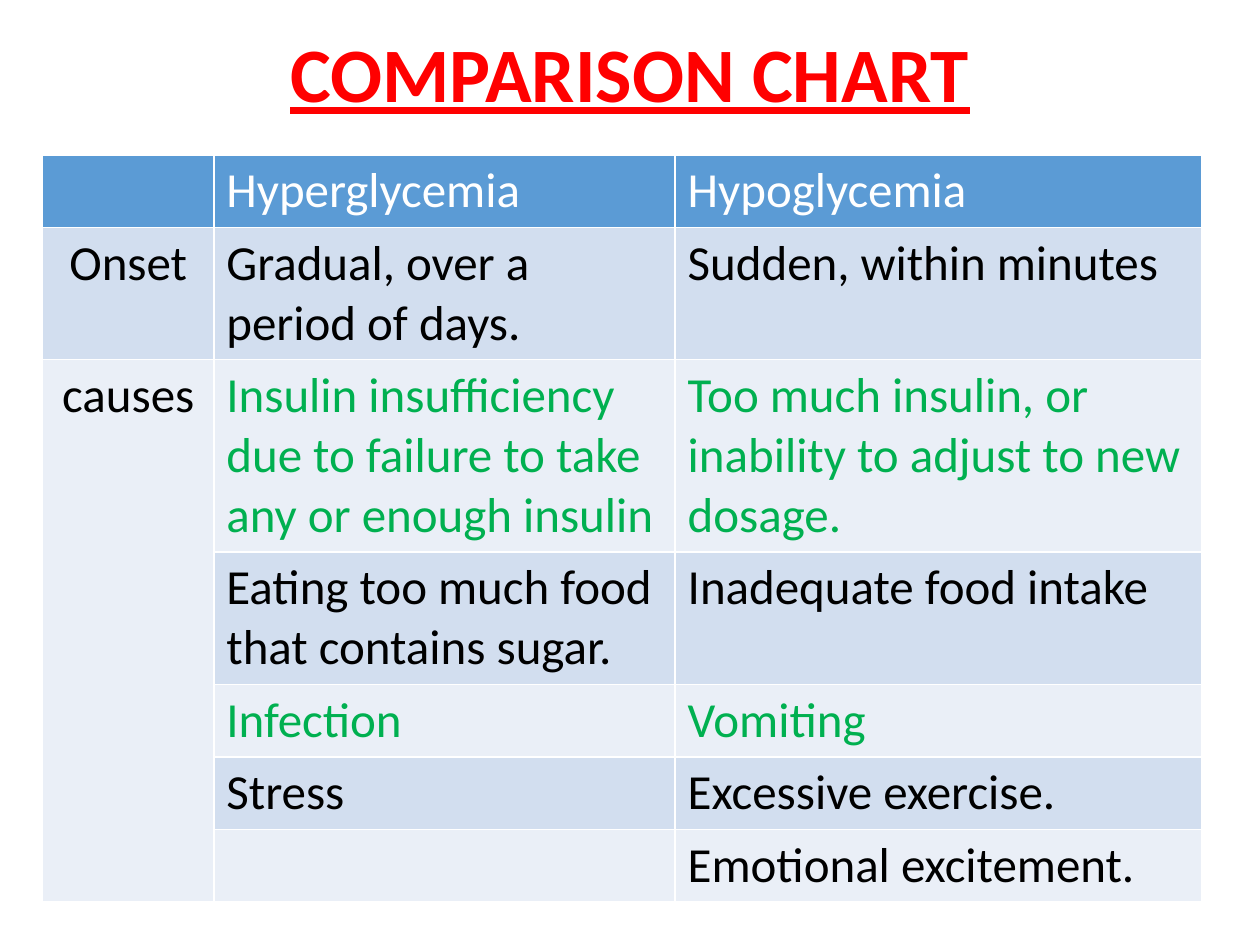
from dataclasses import dataclass

import pptx
import pptx.dml.color
import pptx.enum.text
import pptx.oxml
import pptx.oxml.ns
import pptx.util
from pptx.util import Cm


@dataclass(frozen=True)
class Theme:
    font: str = "Calibri"
    title_size: int = 44
    body_size: int = 28
    title: str = "FF0000"
    header_fill: str = "5B9BD5"
    bands: tuple[str, str] = ("EAEFF7", "D2DEEF")
    white: str = "FFFFFF"
    black: str = "000000"
    green: str = "00B050"
    border_width: int = 1


@dataclass(frozen=True)
class ComparisonRow:
    label: str
    hyper: str
    hypo: str
    color: str
    lines: int = 1


THEME = Theme()
ROWS = [
    ComparisonRow("", "Hyperglycemia", "Hypoglycemia", THEME.white),
    ComparisonRow("Onset", "Gradual, over a period of days.", "Sudden, within minutes",
                  THEME.black, 2),
    ComparisonRow("causes", "Insulin insufficiency due to failure to take any or enough insulin",
                  "Too much insulin, or inability to adjust to new dosage.", THEME.green, 3),
    ComparisonRow("", "Eating too much food that contains sugar.", "Inadequate food intake",
                  THEME.black, 2),
    ComparisonRow("", "Infection", "Vomiting", THEME.green),
    ComparisonRow("", "Stress", "Excessive exercise.", THEME.black),
    ComparisonRow("", "", "Emotional excitement.", THEME.black),
]
CAUSES_ROW = 2
COLUMN_WIDTHS = (3.45, 9.3, 10.62)
LINE_HEIGHT = 1.19
CELL_PADDING = 0.25


def rgb(color: str) -> pptx.dml.color.RGBColor:
    return pptx.dml.color.RGBColor.from_string(color)


def style_text(para, size: int, color: str, bold: bool = False, centred: bool = False) -> None:
    align = pptx.enum.text.PP_ALIGN
    para.alignment = align.CENTER if centred else align.LEFT
    for span in para.runs:
        span.font.name = THEME.font
        span.font.size = pptx.util.Pt(size)
        span.font.bold = bold
        span.font.color.rgb = rgb(color)


def add_borders(cell) -> None:
    properties = cell._tc.get_or_add_tcPr()
    width = pptx.util.Pt(THEME.border_width)
    for side in ("lnL", "lnR", "lnT", "lnB"):
        properties.append(pptx.oxml.parse_xml(
            f'<a:{side} {pptx.oxml.ns.nsdecls("a")} w="{width}"><a:solidFill>'
            f'<a:srgbClr val="{THEME.white}"/></a:solidFill></a:{side}>'))


def fill_cell(cell, text: str, fill: str, color: str, centred: bool) -> None:
    add_borders(cell)
    cell.fill.solid()
    cell.fill.fore_color.rgb = rgb(fill)
    cell.text_frame.text = text
    style_text(cell.text_frame.paragraphs[0], THEME.body_size, color, centred=centred)


def add_title(page, text: str) -> None:
    box = page.shapes.title
    box.left, box.top, box.width, box.height = Cm(3.96), Cm(0.38), Cm(17.48), Cm(2.13)
    box.text_frame.text = text
    para = box.text_frame.paragraphs[0]
    style_text(para, THEME.title_size, THEME.title, bold=True, centred=True)
    para.runs[0].font.underline = True


def add_comparison(page, rows: list[ComparisonRow]) -> None:
    heights = [row.lines * LINE_HEIGHT + CELL_PADDING for row in rows]
    table = page.shapes.add_table(len(rows), len(COLUMN_WIDTHS), Cm(0.86), Cm(3.12),
                                  Cm(sum(COLUMN_WIDTHS)), Cm(sum(heights))).table
    for column, width in zip(table.columns, COLUMN_WIDTHS):
        column.width = Cm(width)
    for index, row in enumerate(rows):
        table.rows[index].height = Cm(heights[index])
        fill = THEME.bands[index % 2] if index else THEME.header_fill
        for position, text in enumerate((row.label, row.hyper, row.hypo)):
            is_label = position == 0
            # Row labels stay black and centred
            fill_cell(table.cell(index, position), text,
                      THEME.bands[0] if is_label and index > CAUSES_ROW else fill,
                      THEME.black if is_label else row.color, is_label)
    # One label covers every cause
    table.cell(CAUSES_ROW, 0).merge(table.cell(len(rows) - 1, 0))


def main() -> None:
    deck = pptx.Presentation()
    deck.slide_width, deck.slide_height = Cm(25.4), Cm(19.05)
    page = deck.slides.add_slide(deck.slide_layouts[5])
    add_title(page, "COMPARISON CHART")
    add_comparison(page, ROWS)
    deck.save("out.pptx")


if __name__ == "__main__":
    main()
